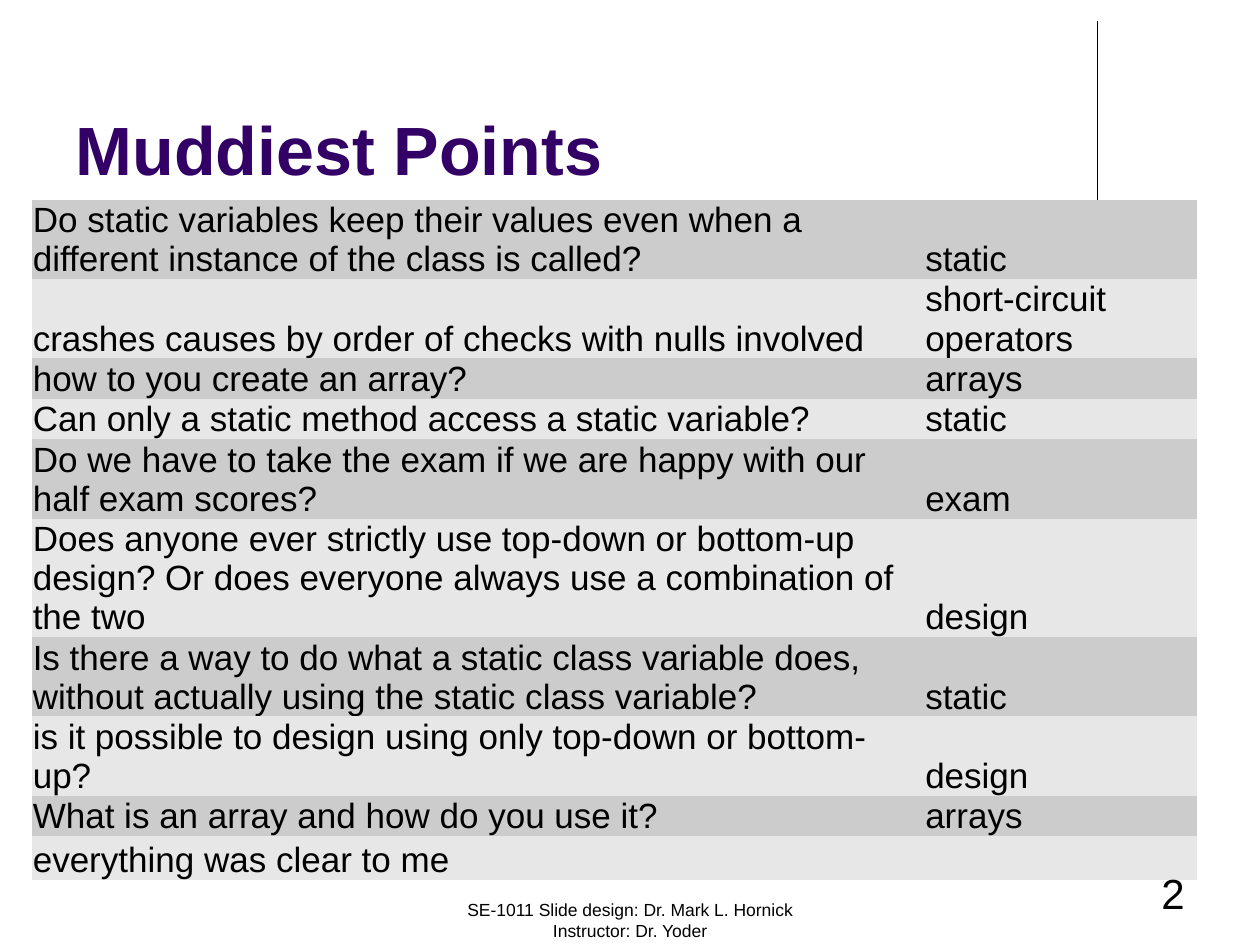
from lxml.etree import SubElement
from pptx import Presentation
from pptx.dml.color import RGBColor
from pptx.enum.shapes import MSO_CONNECTOR
from pptx.enum.text import MSO_ANCHOR, MSO_AUTO_SIZE, PP_ALIGN
from pptx.oxml.ns import qn
from pptx.util import Pt

# Content: question, topic, lines of text the row holds
TITLE = "Muddiest Points"
QUESTIONS = [
    ("Do static variables keep their values even when a different instance of the class is called?", "static", 2),
    ("crashes causes by order of checks with nulls involved", "short-circuit operators", 2),
    ("how to you create an array?", "arrays", 1),
    ("Can only a static method access a static variable?", "static", 1),
    ("Do we have to take the exam if we are happy with our half exam scores?", "exam", 2),
    ("Does anyone ever strictly use top-down or bottom-up design? "
     "Or does everyone always use a combination of the two", "design", 3),
    ("Is there a way to do what a static class variable does, "
     "without actually using the static class variable?", "static", 2),
    ("is it possible to design using only top-down or bottom-up?", "design", 2),
    ("What is an array and how do you use it?", "arrays", 1),
    ("everything was clear to me", "", 1),
]
CREDIT = "SE-1011 Slide design: Dr. Mark L. Hornick Instructor: Dr. Yoder"
PAGE_NUMBER = "2"

FONT = "Arial"
BLACK = RGBColor(0x00, 0x00, 0x00)
PURPLE = RGBColor(0x33, 0x00, 0x66)
BANDS = [RGBColor(0xCC, 0xCC, 0xCC), RGBColor(0xE7, 0xE7, 0xE7)]
PLAIN_TABLE_STYLE = "{2D5ABB26-0587-4C30-8999-92F81FD0307C}"

COLUMN_WIDTHS = [Pt(510), Pt(156)]
LINE_HEIGHT = 22.4
LAST_ROW_HEIGHT = Pt(25.2)


def write(frame, text, size, color=BLACK, bold=False, align=PP_ALIGN.LEFT):
    frame.text = text
    paragraph = frame.paragraphs[0]
    paragraph.alignment = align
    for run in paragraph.runs:
        run.font.name = FONT
        run.font.size = Pt(size)
        run.font.bold = bold
        run.font.color.rgb = color


def add_footer(slide, text, left, top, width, size, align):
    footer = slide.shapes.add_textbox(Pt(left), Pt(top), Pt(width), Pt(36))
    footer.text_frame.word_wrap = True
    write(footer.text_frame, text, size, align=align)


def add_questions(slide):
    frame = slide.shapes.add_table(len(QUESTIONS), len(COLUMN_WIDTHS),
                                   Pt(18), Pt(114), sum(COLUMN_WIDTHS), Pt(390))
    table = frame.table
    table.first_row = table.horz_banding = False
    table._tbl.tblPr.find(qn("a:tableStyleId")).text = PLAIN_TABLE_STYLE
    for column, width in zip(table.columns, COLUMN_WIDTHS):
        column.width = width
    for index, (question, topic, lines) in enumerate(QUESTIONS):
        row = table.rows[index]
        row.height = Pt(LINE_HEIGHT * lines)
        for cell, text in zip(row.cells, (question, topic)):
            cell.margin_left = cell.margin_right = cell.margin_top = Pt(0.75)
            cell.margin_bottom = 0
            cell.vertical_anchor = MSO_ANCHOR.BOTTOM
            cell.fill.solid()
            cell.fill.fore_color.rgb = BANDS[index % 2]
            write(cell.text_frame, text, 20)
    row.height = LAST_ROW_HEIGHT


def main():
    presentation = Presentation()
    presentation.slide_width, presentation.slide_height = Pt(720), Pt(540)
    slide = presentation.slides.add_slide(presentation.slide_layouts[5])

    # Vertical rule
    rule = slide.shapes.add_connector(MSO_CONNECTOR.STRAIGHT, Pt(627), Pt(12), Pt(627), Pt(132))
    rule.line.color.rgb = BLACK
    rule.line.width = Pt(0.75)
    SubElement(rule._element.spPr, qn("a:effectLst"))

    # Title
    title = slide.shapes.title
    title.left, title.top, title.width, title.height = Pt(36), Pt(9.5), Pt(594), Pt(102)
    title.text_frame.auto_size = MSO_AUTO_SIZE.NONE
    title.text_frame.vertical_anchor = MSO_ANCHOR.BOTTOM
    write(title.text_frame, TITLE, 39, PURPLE, bold=True)

    # Table and footers
    add_questions(slide)
    add_footer(slide, CREDIT, 246, 510, 228, 10, PP_ALIGN.CENTER)
    add_footer(slide, PAGE_NUMBER, 516, 492, 168, 24, PP_ALIGN.RIGHT)

    presentation.save("out.pptx")


if __name__ == "__main__":
    main()
